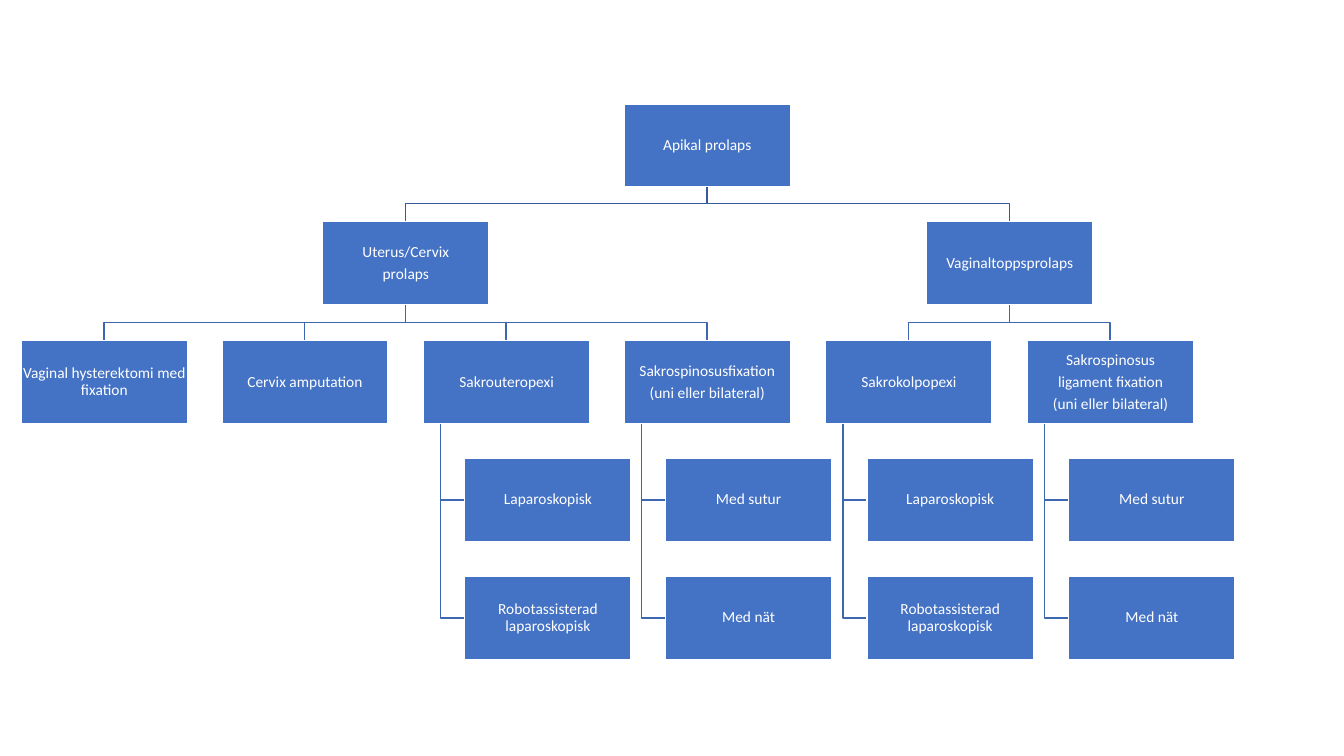
from pptx import Presentation
from pptx import util as u
from pptx.dml.color import RGBColor
from pptx.enum import shapes, text

PX = 9144
THEME = {
    "box": RGBColor.from_string("4472C4"),
    "paper": RGBColor.from_string("FFFFFF"),
    "top line": RGBColor.from_string("365B9D"),
    "line": RGBColor.from_string("3E67B2"),
    "font": "Calibri",
    "size": u.Pt(11),
    "space": u.Pt(3.85),
    "stroke": u.Pt(1),
}
BOX_WIDTH, BOX_HEIGHT = 165, 82
INSET, LEAF_INDENT, STEM_INDENT = 1, 41, 17

laparoscopy = ["Laparoskopisk", "Robotassisterad laparoskopisk"]
fixation = ["Med sutur", "Med nät"]
root = ("Apikal prolaps", 3)
branches = [
    ("Uterus/Cervix\nprolaps", 1.5, [
        ("Vaginal hysterektomi med fixation", 0, []),
        ("Cervix amputation", 1, []),
        ("Sakrouteropexi", 2, laparoscopy),
        ("Sakrospinosusfixation\n(uni eller bilateral)", 3, fixation),
    ]),
    ("Vaginaltoppsprolaps", 4.5, [
        ("Sakrokolpopexi", 4, laparoscopy),
        ("Sakrospinosus\nligament fixation\n(uni eller bilateral)", 5, fixation),
    ]),
]


def place(column, row):
    return round(20.6 + 199.6 * column), round(103 + 117.25 * row)


def fork(parent, child):
    start_x, end_x = parent[0] + BOX_WIDTH // 2, child[0] + BOX_WIDTH // 2
    bottom = parent[1] + BOX_HEIGHT
    middle = (bottom + child[1]) // 2
    return [(start_x, bottom), (start_x, middle), (end_x, middle), (end_x, child[1])]


root_spot = place(root[1], 0)
boxes = [(root[0], root_spot)]
lines = []
for branch, branch_column, methods in branches:
    branch_spot = place(branch_column, 1)
    boxes.append((branch, branch_spot))
    lines.append((fork(root_spot, branch_spot), THEME["top line"]))
    for method, column, variants in methods:
        left, top = place(column, 2)
        boxes.append((method, (left, top)))
        lines.append((fork(branch_spot, (left, top)), THEME["line"]))
        stem = left + STEM_INDENT
        for row, variant in enumerate(variants, start=3):
            leaf_left, leaf_top = left + LEAF_INDENT, place(column, row)[1]
            middle = leaf_top + BOX_HEIGHT // 2
            boxes.append((variant, (leaf_left, leaf_top)))
            points = [(stem, top + BOX_HEIGHT), (stem, middle), (leaf_left, middle)]
            lines.append((points, THEME["line"]))

deck = Presentation()
deck.slide_width, deck.slide_height = 1333 * PX, 750 * PX
page = deck.slides.add_slide(deck.slide_layouts[6])

for points, color in lines:
    builder = page.shapes.build_freeform(*points[0], scale=PX)
    builder.add_line_segments(points[1:], close=False)
    line = builder.convert_to_shape()
    line.shadow.inherit = False
    line.fill.background()
    line.line.color.rgb = color
    line.line.width = THEME["stroke"]

for label, (left, top) in boxes:
    box = page.shapes.add_shape(
        shapes.MSO_SHAPE.RECTANGLE, left * PX, top * PX, BOX_WIDTH * PX, BOX_HEIGHT * PX
    )
    box.shadow.inherit = False
    box.fill.solid()
    box.fill.fore_color.rgb = THEME["box"]
    box.line.color.rgb = THEME["paper"]
    box.line.width = THEME["stroke"]
    frame = box.text_frame
    frame.word_wrap = True
    frame.vertical_anchor = text.MSO_ANCHOR.MIDDLE
    frame.margin_left = frame.margin_right = INSET * PX
    frame.margin_top = frame.margin_bottom = INSET * PX
    frame.text = label
    for para in frame.paragraphs:
        para.alignment = text.PP_ALIGN.CENTER
        para.line_spacing = 0.9
        para.space_after = THEME["space"]
        for span in para.runs:
            span.font.name = THEME["font"]
            span.font.size = THEME["size"]
            span.font.color.rgb = THEME["paper"]

deck.save("out.pptx")
